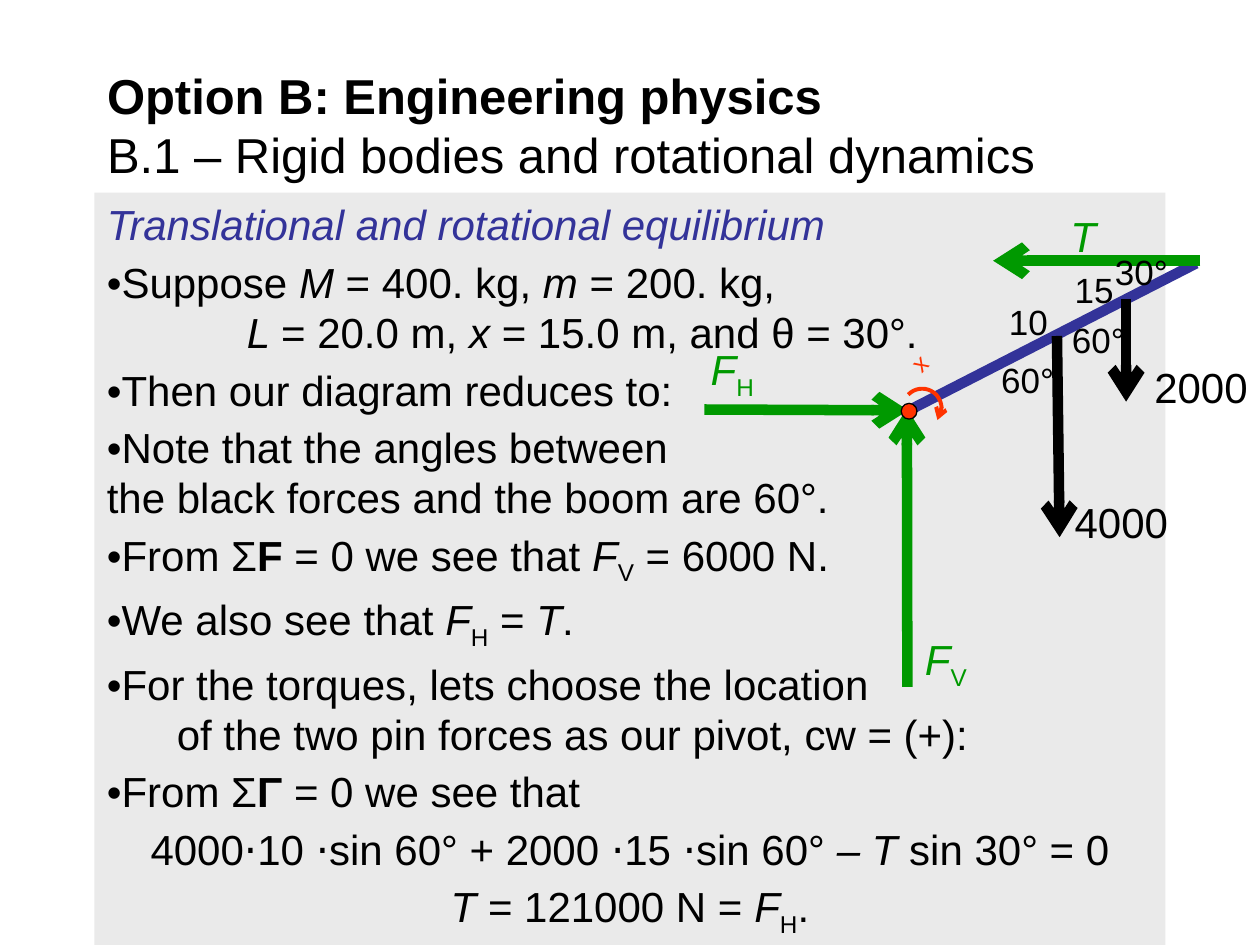
from lxml import etree
from pptx import Presentation
from pptx.dml.color import RGBColor
from pptx.enum.shapes import MSO_CONNECTOR, MSO_SHAPE
from pptx.enum.text import MSO_ANCHOR, MSO_AUTO_SIZE, PP_ALIGN
from pptx.oxml.ns import qn
from pptx.util import Pt

LEFT, CENTER = PP_ALIGN.LEFT, PP_ALIGN.CENTER
TOP, MIDDLE = MSO_ANCHOR.TOP, MSO_ANCHOR.MIDDLE
NO_AUTOFIT = MSO_AUTO_SIZE.NONE
STRAIGHT = MSO_CONNECTOR.STRAIGHT
RECTANGLE, OVAL = MSO_SHAPE.RECTANGLE, MSO_SHAPE.OVAL

BLACK = RGBColor(0x00, 0x00, 0x00)
PANEL_GRAY = RGBColor(0xEA, 0xEA, 0xEA)
BOOM_BLUE = RGBColor(0x33, 0x33, 0x99)
FORCE_GREEN = RGBColor(0x00, 0x99, 0x00)
PIVOT_RED = RGBColor(0xFF, 0x33, 0x00)

ITALIC, BOLD, SUB = "italic", "bold", "subscript"

TITLE = [("Option B: Engineering physics", BOLD), "\v",
         "B.1 – Rigid bodies and rotational dynamics"]

HEADING = "Translational and rotational equilibrium"

STEPS = [
    (80, ["•Suppose ", ("M ", ITALIC), "= 400. kg, ", ("m ", ITALIC), "= 200. kg,", "\v",
          ("L ", ITALIC), "= 20.0 m, ", ("x ", ITALIC), "= 15.0 m, and θ = 30°."]),
    (0, ["•Then our diagram reduces to:"]),
    (0, ["•Note that the angles between", "\v", "the black forces and the boom are 60°."]),
    (0, ["•From Σ", ("F ", BOLD), "= 0 we see that ", ("F", ITALIC), ("V", SUB), " = 6000 N."]),
    (0, ["•We also see that ", ("F", ITALIC), ("H", SUB), " = ", ("T", ITALIC), "."]),
    (40, ["•For the torques, lets choose the location", "\v",
          "of the two pin forces as our pivot, cw = (+):"]),
    (0, ["•From Σ", ("Γ ", BOLD), "= 0 we see that"]),
]

EQUATIONS = [
    ["4000⋅10 ⋅sin 60° + 2000 ⋅15 ⋅sin 60° ", ("– T", ITALIC), " sin 30° = 0"],
    [("T", ITALIC), " = 121000 N = ", ("F", ITALIC), ("H", SUB), "."],
]

FORCES = [
    ((686, 149), (567.5, 149), FORCE_GREEN),
    ((402.5, 234), (519, 234.5), FORCE_GREEN),
    ((518.5, 392.5), (518.25, 233.5), FORCE_GREEN),
    ((643.5, 171), (643.5, 229.5), BLACK),
    ((604, 192), (605.5, 307), BLACK),
]

FORCE_LABELS = [
    (604.5, 116.5, 37.5, [("T", ITALIC)], FORCE_GREEN),
    (399, 193, 58.5, [("F", ITALIC), ("H", SUB)], FORCE_GREEN),
    (521.5, 358.5, 52.5, [("F", ITALIC), ("V", SUB)], FORCE_GREEN),
    (652.5, 203, 74, ["2000"], BLACK),
    (607, 280, 75.5, ["4000"], BLACK),
]

BOOM_LABELS = [
    (569.5, 168, 36.5, "10"),
    (607, 150, 36.5, "15"),
    (630, 139.5, 45, "30°"),
    (565, 201.5, 45, "60°"),
    (605.5, 178.5, 45, "60°"),
]

ROTATION_CURVES = [
    ((519, 225.5), (523.5, 221), (530.5, 221), (535, 225.5)),
    ((535, 225.5), (538.5, 229.5), (539.5, 235.5), (535.75, 240)),
]


def curve_points(start, first, second, end, steps=10):
    for step in range(steps + 1):
        t = step / steps
        u = 1 - t
        yield tuple(u**3 * a + 3 * u * u * t * b + 3 * u * t * t * c + t**3 * d
                    for a, b, c, d in zip(start, first, second, end))


class SlideBuilder:
    font_name = "Arial"

    def __init__(self, presentation):
        self.slide = presentation.slides.add_slide(presentation.slide_layouts[5])

    def fill_paragraph(self, paragraph, segments, size, color, alignment=LEFT):
        for segment in segments:
            if segment == "\v":
                paragraph.add_line_break()
                continue
            text, style = segment if isinstance(segment, tuple) else (segment, None)
            run = paragraph.add_run()
            run.text = text
            if style == ITALIC:
                run.font.italic = True
            elif style == BOLD:
                run.font.bold = True
            elif style == SUB:
                run._r.get_or_add_rPr().set("baseline", "-25000")
        paragraph.alignment = alignment
        font = paragraph.font
        font.name, font.size = self.font_name, Pt(size)
        font.color.rgb = color

    def title(self, left, top, width, height, segments):
        title = self.slide.shapes.title
        title.left, title.top, title.width, title.height = map(Pt, (left, top, width, height))
        frame = title.text_frame
        frame.auto_size = NO_AUTOFIT
        frame.vertical_anchor = MIDDLE
        self.fill_paragraph(frame.paragraphs[0], segments, 28, BLACK)

    def shape(self, kind, left, top, width, height, fill, line=None):
        shape = self.slide.shapes.add_shape(kind, *map(Pt, (left, top, width, height)))
        shape.shadow.inherit = False
        shape.fill.solid()
        shape.fill.fore_color.rgb = fill
        if line is None:
            shape.line.fill.background()
        else:
            shape.line.color.rgb = line
            shape.line.width = Pt(0.75)
        return shape

    def panel(self, left, top, width, height):
        frame = self.shape(RECTANGLE, left, top, width, height, PANEL_GRAY).text_frame
        frame.word_wrap = True
        frame.vertical_anchor = TOP
        heading = frame.paragraphs[0]
        self.fill_paragraph(heading, [(HEADING, ITALIC)], 24, BOOM_BLUE)
        heading.space_after = Pt(2)
        rows = [(indent, segments, LEFT) for indent, segments in STEPS]
        rows += [(0, segments, CENTER) for segments in EQUATIONS]
        for indent, segments, alignment in rows:
            paragraph = frame.add_paragraph()
            properties = paragraph._p.get_or_add_pPr()
            properties.set("marL", str(Pt(indent)))
            properties.set("indent", str(-Pt(indent)))
            self.fill_paragraph(paragraph, segments, 24, BLACK, alignment)
            paragraph.space_before = paragraph.space_after = Pt(2)

    def add_arrowhead(self, line):
        etree.SubElement(line._get_or_add_ln(), qn("a:tailEnd"), type="arrow")

    def line(self, start, end, color, arrow=False):
        connector = self.slide.shapes.add_connector(STRAIGHT, *map(Pt, start + end))
        connector.line.color.rgb = color
        connector.line.width = Pt(6)
        if arrow:
            self.add_arrowhead(connector.line)
        etree.SubElement(connector._element.spPr, qn("a:effectLst"))

    def label(self, left, top, width, segments, size, color, wrap=False, rotation=0):
        height = size * 1.2 + 7.2
        box = self.slide.shapes.add_textbox(*map(Pt, (left, top, width, height)))
        box.rotation = rotation
        box.text_frame.word_wrap = wrap
        self.fill_paragraph(box.text_frame.paragraphs[0], segments, size, color)

    def curved_arrow(self, curves, color):
        points = [(Pt(x), Pt(y)) for curve in curves for x, y in curve_points(*curve)]
        builder = self.slide.shapes.build_freeform(*points[0])
        builder.add_line_segments(points[1:], close=False)
        shape = builder.convert_to_shape()
        shape.shadow.inherit = False
        shape.fill.background()
        shape.line.color.rgb = color
        shape.line.width = Pt(2.25)
        self.add_arrowhead(shape.line)


def main():
    presentation = Presentation()
    presentation.slide_width, presentation.slide_height = Pt(720), Pt(540)
    builder = SlideBuilder(presentation)
    builder.title(54, 36, 612, 70.5, TITLE)
    builder.panel(54, 110, 612, 430)
    builder.line((517.5, 235.5), (683.5, 150.5), BOOM_BLUE)
    for start, end, color in FORCES:
        builder.line(start, end, color, arrow=True)
    for left, top, width, segments, color in FORCE_LABELS:
        builder.label(left, top, width, segments, 24, color, wrap=True)
    builder.shape(OVAL, 515, 230.5, 9, 9, PIVOT_RED, BLACK)
    for left, top, width, text in BOOM_LABELS:
        builder.label(left, top, width, [text], 20, BLACK)
    builder.curved_arrow(ROTATION_CURVES, PIVOT_RED)
    builder.label(517, 198.5, 21.5, ["x"], 14, PIVOT_RED, rotation=135.9)
    presentation.save("out.pptx")


if __name__ == "__main__":
    main()
